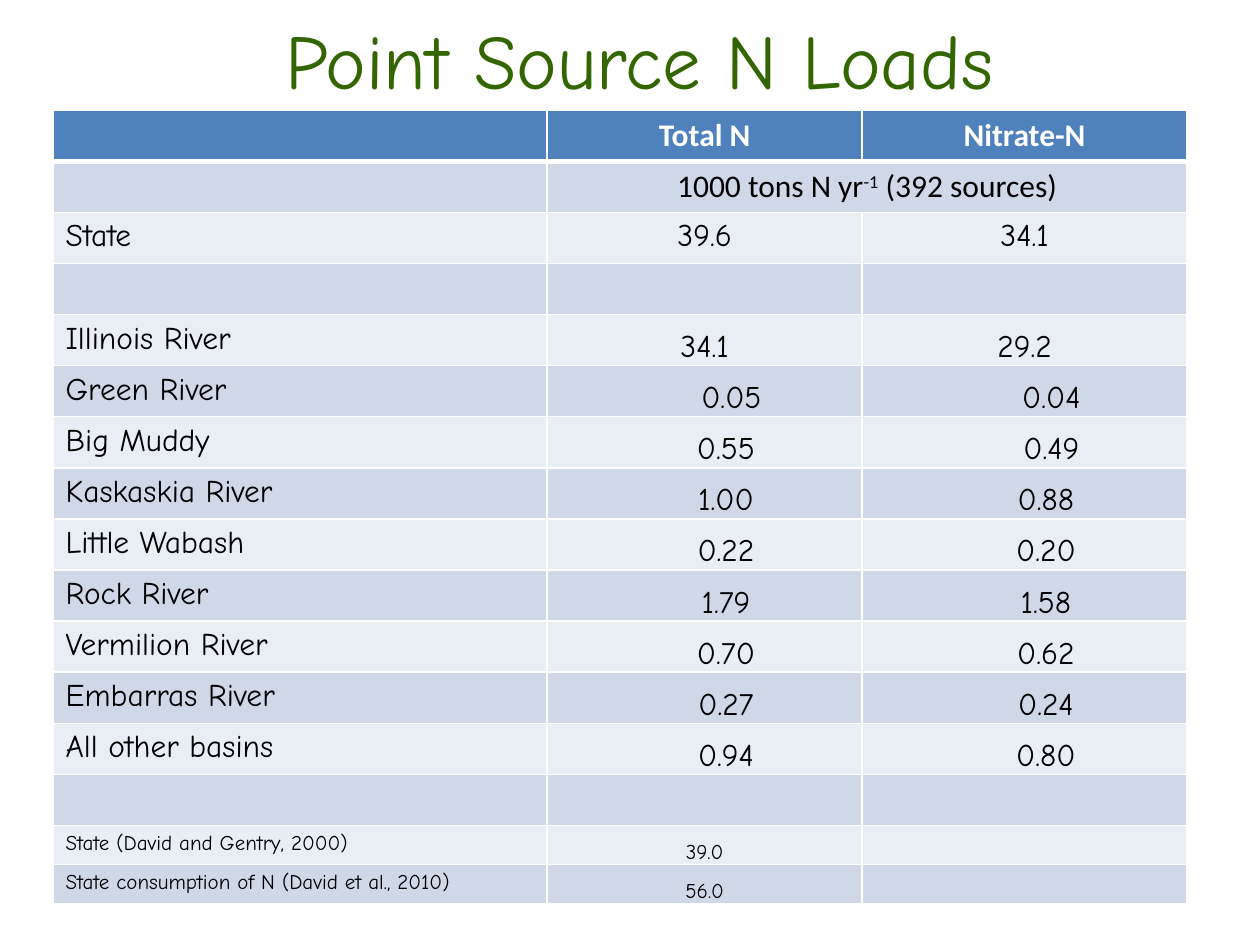
from dataclasses import dataclass

from lxml.etree import SubElement as Sub
from pptx import Presentation
from pptx.dml.color import RGBColor as Rgb
from pptx.enum.text import MSO_ANCHOR as Anchor, PP_ALIGN as Align
from pptx.oxml.ns import qn
from pptx.util import Cm, Pt


@dataclass(frozen=True)
class Theme:
    green: str = "336600"
    blue: str = "4F81BD"
    dark: str = "D0D8E8"
    light: str = "E9EDF4"
    white: str = "FFFFFF"
    black: str = "000000"
    hand: str = "Comic Neue"
    sans: str = "Calibri"
    title: int = 44
    body: int = 18
    note: int = 12
    thin: int = 1
    thick: int = 3


T = Theme()
COLS = (9.96, 6.35, 6.55)
TALL, LOW = 1.03, 0.79
NEAR, FAR = 0.86, 1.08
BASINS = (
    ("Illinois River", ("34.1", 0), ("29.2", 0)),
    ("Green River", ("0.05", FAR), ("0.04", FAR)),
    ("Big Muddy", ("0.55", NEAR), ("0.49", FAR)),
    ("Kaskaskia River", ("1.00", NEAR), ("0.88", NEAR)),
    ("Little Wabash", ("0.22", NEAR), ("0.20", NEAR)),
    ("Rock River", ("1.79", NEAR), ("1.58", NEAR)),
    ("Vermilion River", ("0.70", NEAR), ("0.62", NEAR)),
    ("Embarras River", ("0.27", NEAR), ("0.24", NEAR)),
    ("All other basins", ("0.94", NEAR), ("0.80", NEAR)),
)
NOTES = (
    ("State (David and Gentry, 2000)", ("39.0", 0)),
    ("State consumption of N (David et al., 2010)", ("56.0", 0)),
)
HEAD, UNIT, STATE = 0, 1, 2
FIRST = 4
LAST = FIRST + len(BASINS) + 1
COUNT = LAST + len(NOTES)


def write(para, text, size=T.body, face=T.hand, color=T.black, bold=False):
    run = para.add_run()
    run.text = text
    font = run.font
    font.size, font.name, font.bold = Pt(size), face, bold
    font.color.rgb = Rgb.from_string(color)
    return run


def edge(cell, side, width):
    line = Sub(cell._tc.get_or_add_tcPr(), qn(f"a:ln{side}"), w=str(Pt(width)))
    Sub(Sub(line, qn("a:solidFill")), qn("a:srgbClr"), val=T.white)


def paint(cell, row):
    for side in "LRTB":
        heavy = (row, side) in ((HEAD, "B"), (UNIT, "T"))
        edge(cell, side, T.thick if heavy else T.thin)
    cell.fill.solid()
    tone = T.blue if row == HEAD else T.dark if row % 2 else T.light
    cell.fill.fore_color.rgb = Rgb.from_string(tone)
    if row >= LAST:
        end = Sub(cell.text_frame.paragraphs[0]._p, qn("a:endParaRPr"))
        end.set("sz", str(T.note * 100))


def center(cell):
    para = cell.text_frame.paragraphs[0]
    para.alignment = Align.CENTER
    return para


def load(cell, text, shift, size):
    cell.vertical_anchor = Anchor.BOTTOM
    cell.margin_left = Cm(0.02 + shift)
    cell.margin_right = cell.margin_top = Cm(0.02)
    cell.margin_bottom = 0
    write(center(cell), text, size)


def entry(grid, row, name, loads, size):
    write(grid.cell(row, 0).text_frame.paragraphs[0], name, size)
    for col, (text, shift) in enumerate(loads, 1):
        load(grid.cell(row, col), text, shift, size)


def heading(slide, left, top, width, height):
    box = slide.shapes.title
    box.left, box.top, box.width, box.height = map(Cm, (left, top, width, height))
    frame = box.text_frame
    frame.vertical_anchor = Anchor.MIDDLE
    write(center(box), "Point Source N Loads", T.title, color=T.green)


def loads(slide, left, top):
    high = [LOW if row >= LAST else TALL for row in range(COUNT)]
    frame = slide.shapes.add_table(
        COUNT, len(COLS), Cm(left), Cm(top), Cm(sum(COLS)), Cm(sum(high)))
    grid = frame.table
    grid.horz_banding = False
    for col, width in zip(grid.columns, COLS):
        col.width = Cm(width)
    for row, size in zip(grid.rows, high):
        row.height = Cm(size)
    for row in range(COUNT):
        for col in range(len(COLS)):
            paint(grid.cell(row, col), row)

    for col, text in enumerate(("Total N", "Nitrate-N"), 1):
        write(center(grid.cell(HEAD, col)), text, face=T.sans,
              color=T.white, bold=True)
    unit = grid.cell(UNIT, 1)
    unit.merge(grid.cell(UNIT, 2))
    para = center(unit)
    write(para, "1000 tons N yr", face=T.sans)
    power = write(para, "-1", face=T.sans)
    power._r.get_or_add_rPr().set("baseline", "30000")
    write(para, " (392 sources)", face=T.sans)

    write(grid.cell(STATE, 0).text_frame.paragraphs[0], "State")
    for col, text in enumerate(("39.6", "34.1"), 1):
        write(center(grid.cell(STATE, col)), text)
    for row, (name, *pairs) in enumerate(BASINS, FIRST):
        entry(grid, row, name, pairs, T.body)
    for row, (name, *pairs) in enumerate(NOTES, LAST):
        entry(grid, row, name, pairs, T.note)


def main():
    deck = Presentation()
    deck.slide_width, deck.slide_height = Cm(25.4), Cm(19.05)
    slide = deck.slides.add_slide(deck.slide_layouts[5])
    heading(slide, 1.47, 0.2, 22.86, 1.98)
    loads(slide, 1.07, 2.22)
    deck.save("out.pptx")


if __name__ == "__main__":
    main()
